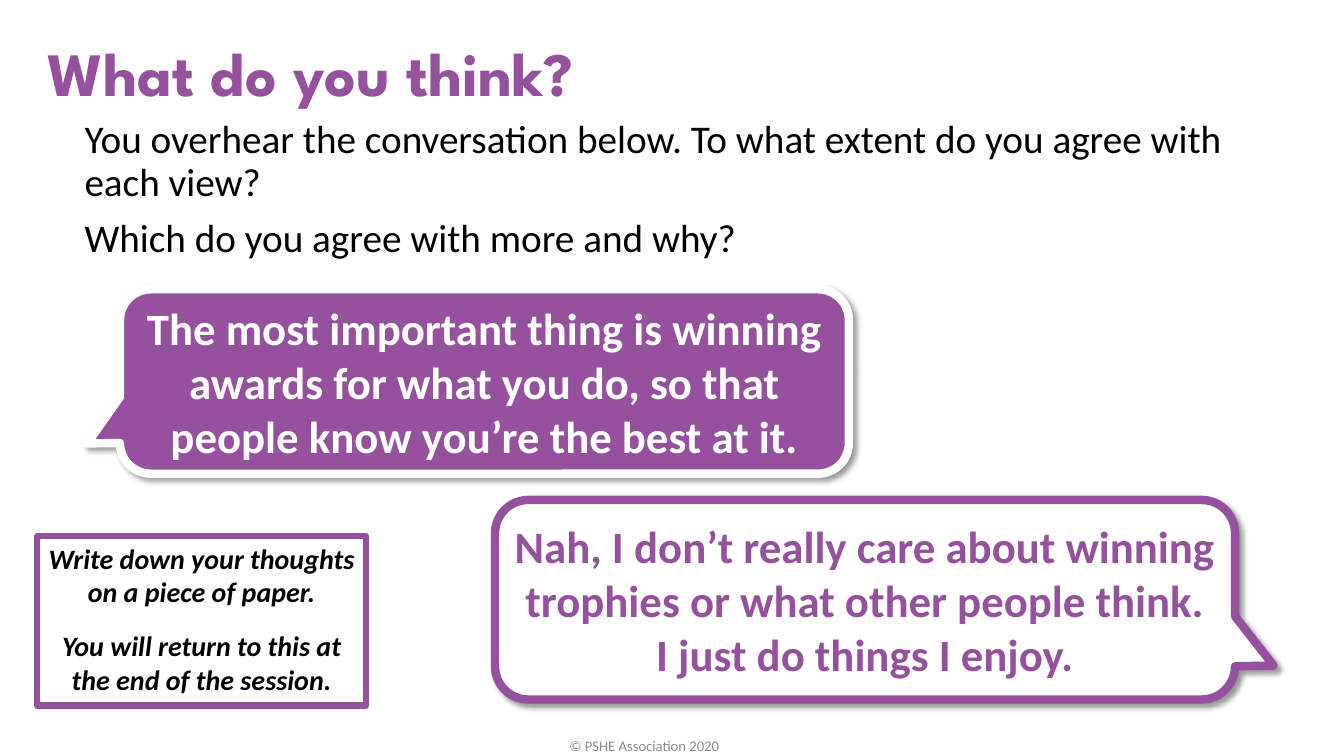
from lxml import etree
from pptx import Presentation
from pptx.dml.color import RGBColor
from pptx.enum.shapes import MSO_SHAPE as Preset
from pptx.enum.text import MSO_ANCHOR as Anchor, PP_ALIGN as Align
from pptx.oxml.ns import qn
from pptx.util import Inches, Pt

PURPLE, WHITE, BLACK, GREY = "95519E", "FFFFFF", "000000", "8C8C8C"


def color(value):
    """Turn a hex string into a colour."""
    return RGBColor.from_string(value)


def write(shape, texts, size, ink, font="Calibri", bold=False, italic=False,
          align=Align.LEFT, anchor=Anchor.TOP, gap=0, spacing=1.0):
    """Fill a shape with equally styled paragraphs."""
    frame = shape.text_frame
    frame.word_wrap = True
    frame.vertical_anchor = anchor
    for index, text in enumerate(texts):
        paragraph = frame.add_paragraph() if index else frame.paragraphs[0]
        paragraph.alignment = align
        paragraph.line_spacing = spacing
        if index:
            paragraph.space_before = Pt(gap)
        run = paragraph.add_run()
        run.text = text
        run.font.name = font
        run.font.size = Pt(size)
        run.font.bold = bold
        run.font.italic = italic
        run.font.color.rgb = color(ink)


def add_text(slide, box, texts, size, ink, **style):
    """Add a text box."""
    shape = slide.shapes.add_textbox(*map(Inches, box))
    write(shape, texts, size, ink, **style)


def add_panel(slide, preset, box, line, width):
    """Add an outlined preset shape without a shadow."""
    shape = slide.shapes.add_shape(preset, *map(Inches, box))
    shape.shadow.inherit = False
    shape.line.color.rgb = color(line)
    shape.line.width = Pt(width)
    return shape


def add_drop_shadow(shape):
    """Cast a soft shadow to the lower right."""
    effects = shape._element.spPr.find(qn("a:effectLst"))
    shadow = etree.SubElement(
        effects, qn("a:outerShdw"), blurRad=str(Pt(4)), dist=str(Pt(3)),
        dir="2700000", algn="tl", rotWithShape="0")
    tint = etree.SubElement(shadow, qn("a:srgbClr"), val=BLACK)
    etree.SubElement(tint, qn("a:alpha"), val="40000")


def add_speech(slide, box, tail, text, fill, ink):
    """Add a speech bubble whose outline matches its text."""
    bubble = add_panel(slide, Preset.ROUNDED_RECTANGULAR_CALLOUT, box, ink, 6)
    for index, value in enumerate((*tail, 0.167)):
        bubble.adjustments[index] = value
    bubble.fill.solid()
    bubble.fill.fore_color.rgb = color(fill)
    add_drop_shadow(bubble)
    write(bubble, [text], 32, ink, bold=True, align=Align.CENTER,
          anchor=Anchor.MIDDLE)


def add_note(slide, box, texts):
    """Add the framed writing task."""
    note = add_panel(slide, Preset.RECTANGLE, box, PURPLE, 4.5)
    note.fill.background()
    write(note, texts, 20, BLACK, bold=True, italic=True,
          align=Align.CENTER, gap=14.6)


def main():
    """Build the slide and save it."""
    presentation = Presentation()
    presentation.slide_width = Inches(13.33)
    presentation.slide_height = Inches(7.5)
    slide = presentation.slides.add_slide(presentation.slide_layouts[6])
    add_text(slide, (0.37, 0.3, 11.72, 0.84), ["What do you think?"], 44,
             PURPLE, font="League Spartan", bold=True)
    add_text(slide, (0, 7.3, 12.78, 0.2), ["© PSHE Association 2020"], 10.5,
             GREY, align=Align.CENTER, anchor=Anchor.MIDDLE)
    add_text(slide, (0.74, 1.14, 11.74, 1.6), [
        "You overhear the conversation below. To what extent do you agree "
        "with each view?",
        "Which do you agree with more and why?",
    ], 28, BLACK, gap=10, spacing=0.9)
    add_speech(slide, (1.19, 2.87, 7.23, 1.83), (-0.545, 0.336),
               "The most important thing is winning awards for what you do, "
               "so that people know you’re the best at it.", PURPLE, WHITE)
    add_speech(slide, (4.91, 4.96, 7.34, 1.98), (0.552, 0.33),
               "Nah, I don’t really care about winning trophies or what "
               "other people think. I just do things I enjoy.", WHITE, PURPLE)
    add_note(slide, (0.37, 5.32, 3.26, 1.68), [
        "Write down your thoughts on a piece of paper.",
        "You will return to this at the end of the session.",
    ])
    presentation.save("out.pptx")


if __name__ == "__main__":
    main()
